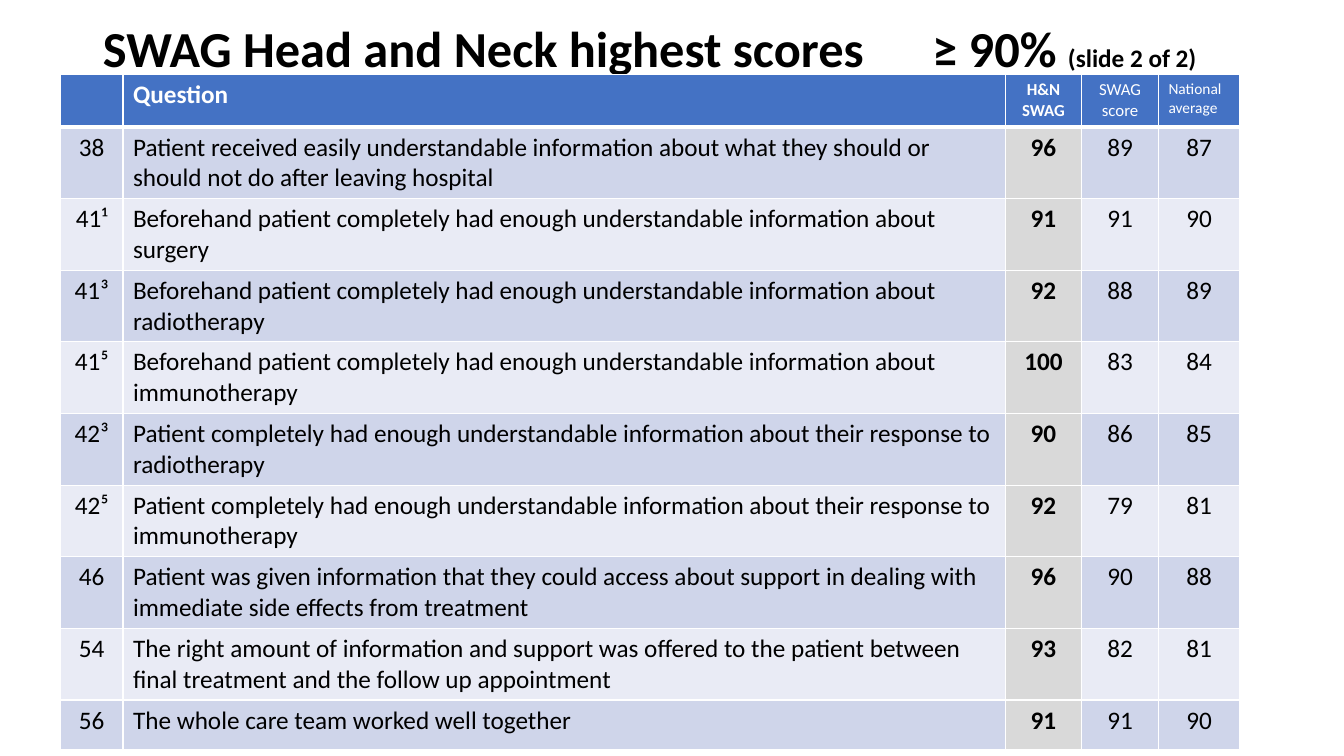
from lxml.etree import SubElement
from pptx import Presentation
from pptx.dml.color import RGBColor
from pptx.enum.text import MSO_ANCHOR, MSO_AUTO_SIZE, PP_ALIGN
from pptx.oxml.ns import qn
from pptx.util import Inches, Pt

FONT = "Calibri"
TITLE = [("SWAG Head and Neck highest scores  \t  ≥ 90% ", 36), ("(slide 2 of 2)", 18)]
# text, size, bold, alignment
HEADER = [
    ("", 18, True, PP_ALIGN.LEFT),
    ("Question", 18, True, PP_ALIGN.LEFT),
    ("H&N SWAG", 12, True, PP_ALIGN.CENTER),
    ("SWAG score", 12, False, PP_ALIGN.CENTER),
    ("National average", 11, False, PP_ALIGN.LEFT),
]
SCORES = [
    ("38", "Patient received easily understandable information about what they should or "
     "should not do after leaving hospital", 96, 89, 87),
    ("41¹", "Beforehand patient completely had enough understandable information about "
     "surgery", 91, 91, 90),
    ("41³", "Beforehand patient completely had enough understandable information about "
     "radiotherapy", 92, 88, 89),
    ("41⁵", "Beforehand patient completely had enough understandable information about "
     "immunotherapy", 100, 83, 84),
    ("42³", "Patient completely had enough understandable information about their "
     "response to radiotherapy", 90, 86, 85),
    ("42⁵", "Patient completely had enough understandable information about their "
     "response to immunotherapy", 92, 79, 81),
    ("46", "Patient was given information that they could access about support in dealing "
     "with immediate side effects from treatment", 96, 90, 88),
    ("54", "The right amount of information and support was offered to the patient between "
     "final treatment and the follow up appointment", 93, 82, 81),
    ("56", "The whole care team worked well together", 91, 91, 90),
]
COL_WIDTHS = [0.62, 8.75, 0.76, 0.76, 0.81]
HEADER_HEIGHT, ROW_HEIGHT = 0.52, 0.49
BLUE, WHITE, BLACK, GREY = "4472C4", "FFFFFF", "000000", "D9D9D9"
BANDS = ["CFD5EA", "E9EBF5"]
QUESTION_COL, HN_COL = 1, 2


def rgb(value):
    return RGBColor.from_string(value)


def set_font(font, size, color, bold):
    font.name, font.size, font.bold = FONT, Pt(size), bold
    font.color.rgb = rgb(color)


def set_borders(cell, bottom=1, top=1):
    """Draw white cell borders; they must come before the fill in the cell's XML."""
    tc_pr = cell._tc.get_or_add_tcPr()
    for tag, width in (("lnL", 1), ("lnR", 1), ("lnT", top), ("lnB", bottom)):
        line = SubElement(tc_pr, qn(f"a:{tag}"), w=str(Pt(width)))
        fill = SubElement(line, qn("a:solidFill"))
        SubElement(fill, qn("a:srgbClr"), val=WHITE)


def fill_cell(cell, text, size, bold, align, color, fill, bottom=1, top=1):
    set_borders(cell, bottom, top)
    cell.fill.solid()
    cell.fill.fore_color.rgb = rgb(fill)
    cell.text = text
    p = cell.text_frame.paragraphs[0]
    p.alignment = align
    set_font(p.font, size, color, bold)


def add_title(s):
    title = s.shapes.title
    title.left, title.top = Inches(0.92), Inches(0.16)
    title.width, title.height = Inches(11.5), Inches(0.69)
    tf = title.text_frame
    tf.auto_size = MSO_AUTO_SIZE.NONE
    tf.vertical_anchor = MSO_ANCHOR.MIDDLE
    p = tf.paragraphs[0]
    p.alignment, p.line_spacing = PP_ALIGN.LEFT, 0.9
    for text, size in TITLE:
        r = p.add_run()
        r.text = text
        set_font(r.font, size, BLACK, True)


def add_scores(s):
    height = HEADER_HEIGHT + ROW_HEIGHT * len(SCORES)
    table = s.shapes.add_table(len(SCORES) + 1, len(COL_WIDTHS), Inches(0.6), Inches(0.74),
                               Inches(sum(COL_WIDTHS)), Inches(height)).table
    for column, width in zip(table.columns, COL_WIDTHS):
        column.width = Inches(width)
    for i, row in enumerate(table.rows):
        row.height = Inches(ROW_HEIGHT if i else HEADER_HEIGHT)

    for col, (text, size, bold, align) in enumerate(HEADER):
        fill_cell(table.cell(0, col), text, size, bold, align, WHITE, BLUE, bottom=3)
    for i, values in enumerate(SCORES):
        for col, value in enumerate(values):
            align = PP_ALIGN.LEFT if col == QUESTION_COL else PP_ALIGN.CENTER
            fill = GREY if col == HN_COL else BANDS[i % 2]
            fill_cell(table.cell(i + 1, col), str(value), 18, col == HN_COL, align,
                      BLACK, fill, top=1 if i else 3)


def main():
    prs = Presentation()
    prs.slide_width, prs.slide_height = Inches(13.33), Inches(7.5)
    s = prs.slides.add_slide(prs.slide_layouts[5])
    add_title(s)
    add_scores(s)
    prs.save("out.pptx")


if __name__ == "__main__":
    main()
